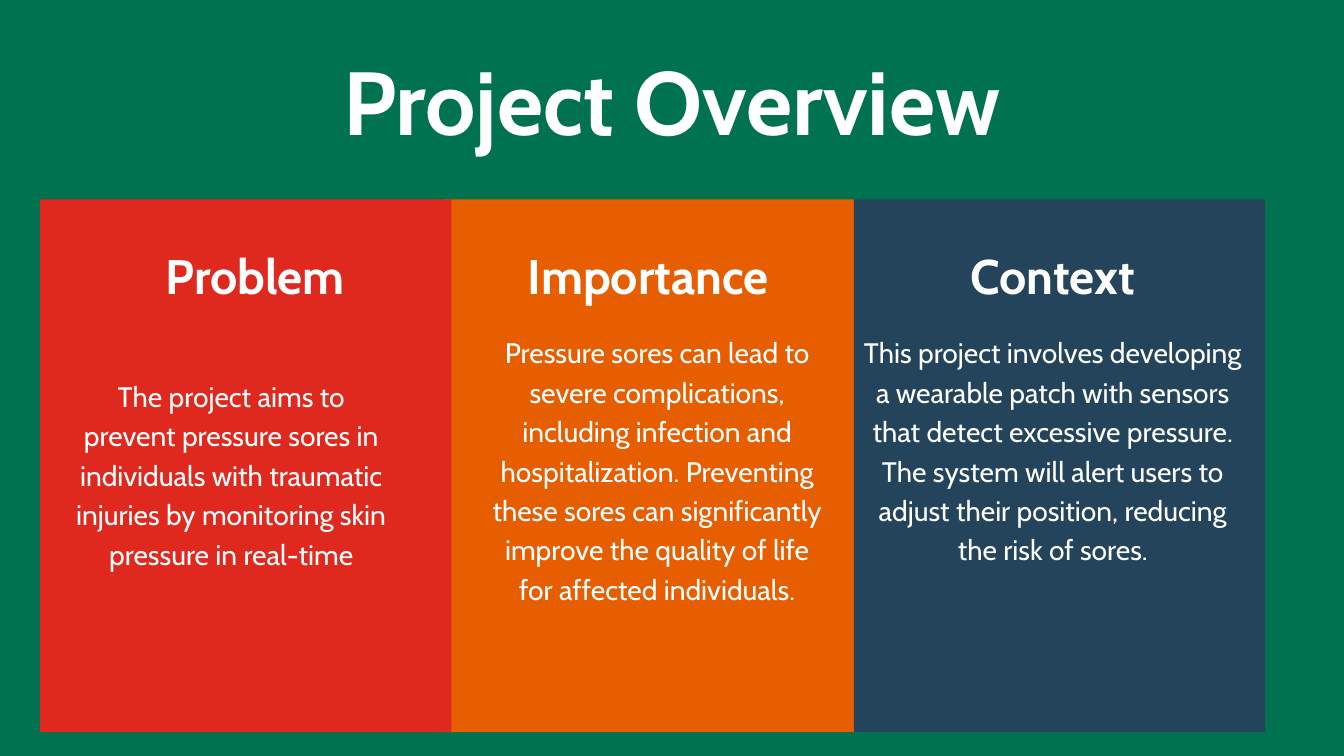
from dataclasses import dataclass

from pptx import Presentation
from pptx.dml.color import RGBColor
from pptx.enum.shapes import MSO_SHAPE
from pptx.enum.text import MSO_ANCHOR, MSO_AUTO_SIZE, PP_ALIGN
from pptx.util import Cm, Pt

RECTANGLE = MSO_SHAPE.RECTANGLE
TOP = MSO_ANCHOR.TOP
FIXED = MSO_AUTO_SIZE.NONE
CENTER = PP_ALIGN.CENTER


@dataclass(frozen=True)
class Theme:
    font: str = "Cabin"
    background: str = "00724F"
    text: str = "FFFFFF"
    problem: str = "DF291F"
    importance: str = "E65E00"
    context: str = "23445B"
    title_size: float = 96
    title_spacing: float = 115.2
    heading_size: float = 52
    heading_spacing: float = 72.8
    body_size: float = 30.2
    body_spacing: float = 42.3


theme = Theme()


def write(box, text, *, size, spacing, bold=False):
    frame = box.text_frame
    frame.word_wrap = True
    frame.auto_size = FIXED
    frame.vertical_anchor = TOP
    frame.margin_left = frame.margin_right = frame.margin_top = frame.margin_bottom = 0
    para = frame.paragraphs[0]
    para.alignment = CENTER
    para.line_spacing = Pt(spacing)
    para.space_before = Pt(0)
    span = para.add_run()
    span.text = text
    span.font.name = theme.font
    span.font.size = Pt(size)
    span.font.bold = bold
    span.font.color.rgb = RGBColor.from_string(theme.text)


deck = Presentation()
deck.slide_width = Cm(50.8)
deck.slide_height = Cm(28.58)
page = deck.slides.add_slide(deck.slide_layouts[5])
page.background.fill.solid()
page.background.fill.fore_color.rgb = RGBColor.from_string(theme.background)

title = page.shapes.title
title.left, title.top, title.width, title.height = Cm(8.56), Cm(1.73), Cm(33.66), Cm(4.04)
write(title, "Project Overview", size=theme.title_size, spacing=theme.title_spacing, bold=True)

panel_top, panel_width, panel_height = 7.54, 15.54, 20.14
heading_top, heading_height = 8.94, 2.46

columns = [
    {
        "panel": (16.74, theme.importance),
        "heading": ("Importance", 19.28, 10.46),
        "body": (18.47, 12.47, 12.75, 13.26),
        "text": "Pressure sores can lead to severe complications, including infection and "
                "hospitalization. Preventing these sores can significantly improve the "
                "quality of life for affected individuals.",
    },
    {
        "panel": (1.52, theme.problem),
        "heading": ("Problem", 5.82, 7.65),
        "body": (2.84, 14.12, 11.81, 8.84),
        "text": "The project aims to prevent pressure sores in individuals with traumatic "
                "injuries by monitoring skin pressure in real-time",
    },
    {
        "panel": (32.28, theme.context),
        "heading": ("Context", 36.22, 7.14),
        "body": (32.61, 12.47, 14.38, 10.31),
        "text": "This project involves developing a wearable patch with sensors that detect "
                "excessive pressure. The system will alert users to adjust their position, "
                "reducing the risk of sores.",
    },
]

for column in columns:
    left, color = column["panel"]
    panel = page.shapes.add_shape(
        RECTANGLE, Cm(left), Cm(panel_top), Cm(panel_width), Cm(panel_height)
    )
    panel.shadow.inherit = False
    panel.fill.solid()
    panel.fill.fore_color.rgb = RGBColor.from_string(color)
    panel.line.fill.background()

    heading, left, width = column["heading"]
    box = page.shapes.add_textbox(Cm(left), Cm(heading_top), Cm(width), Cm(heading_height))
    write(box, heading, size=theme.heading_size, spacing=theme.heading_spacing, bold=True)

    box = page.shapes.add_textbox(*(Cm(length) for length in column["body"]))
    write(box, column["text"], size=theme.body_size, spacing=theme.body_spacing)

deck.save("out.pptx")
